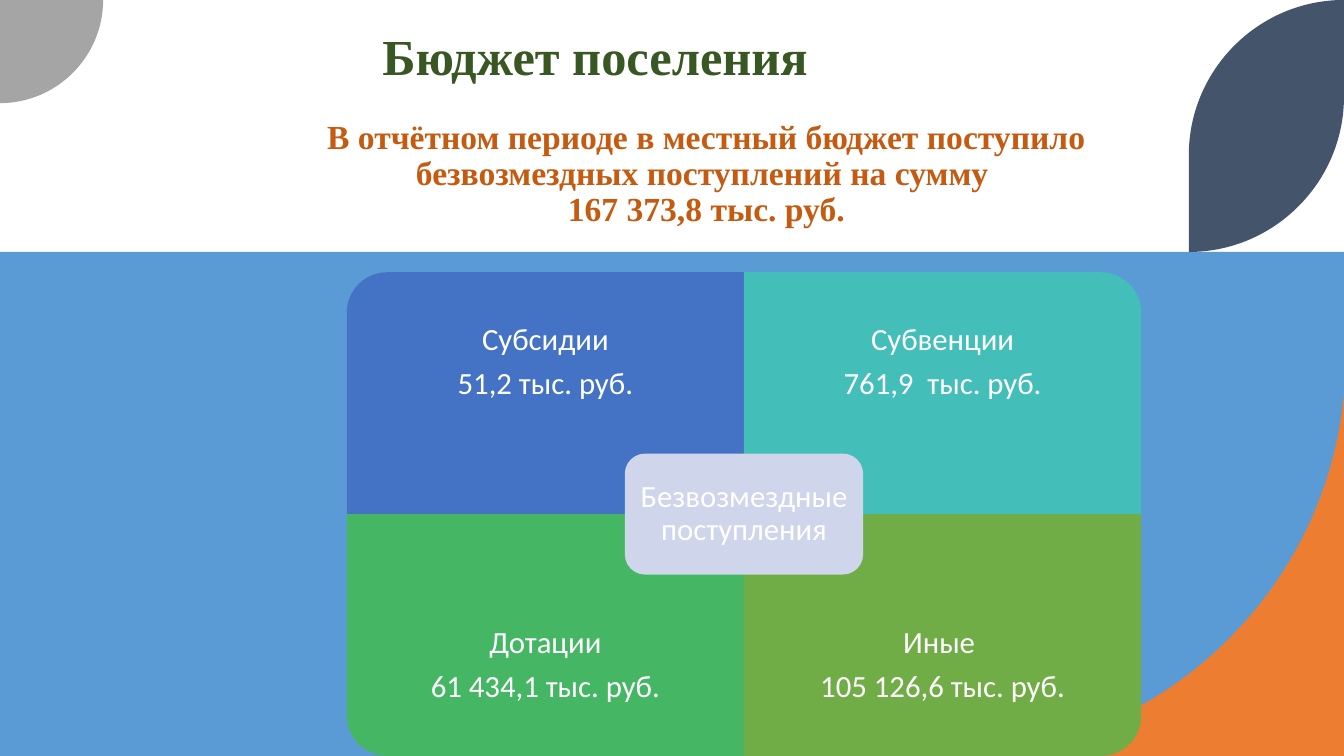
from pptx import Presentation
from pptx.dml.color import RGBColor
from pptx.enum.shapes import MSO_SHAPE
from pptx.enum.text import MSO_ANCHOR, MSO_AUTO_SIZE, PP_ALIGN
from pptx.oxml.ns import qn
from pptx.util import Cm, Pt

RECT, ROUND1, ROUNDED = (MSO_SHAPE.RECTANGLE, MSO_SHAPE.ROUND_1_RECTANGLE,
                         MSO_SHAPE.ROUNDED_RECTANGLE)
MIDDLE, TOP, BOTTOM = MSO_ANCHOR.MIDDLE, MSO_ANCHOR.TOP, MSO_ANCHOR.BOTTOM
LEFT, CENTER = PP_ALIGN.LEFT, PP_ALIGN.CENTER

COLORS = {
    "band": "5B9BD5", "corner": "ED7D31", "quarter": "A5A5A5", "leaf": "44546A",
    "title": "385723", "summary": "C55A11", "white": "FFFFFF",
    "subsidies": "4472C4", "subventions": "43BEB9",
    "grants": "45B664", "other": "70AD47", "center": "CFD5EA",
}
WIDTH, HEIGHT = 33.87, 19.05
SERIF, SANS = "Times New Roman", "Calibri"

# Each quadrant: column, row, rotation, colour, lines of text
QUADRANTS = [
    (0, 0, 270, "subsidies", ["Субсидии", "51,2 тыс. руб."]),
    (1, 0, 0, "subventions", ["Субвенции", "761,9  тыс. руб."]),
    (0, 1, 180, "grants", ["Дотации", "61 434,1 тыс. руб."]),
    (1, 1, 90, "other", ["Иные ", "105 126,6 тыс. руб."]),
]


def paint(sp, color):
    sp.shadow.inherit = False
    sp.fill.solid()
    sp.fill.fore_color.rgb = RGBColor.from_string(COLORS[color])
    sp.line.fill.background()


def add_block(s, kind, x, y, w, h, color):
    sp = s.shapes.add_shape(kind, Cm(x), Cm(y), Cm(w), Cm(h))
    paint(sp, color)
    return sp


def quarter_arc(start, corner, end):
    """Bezier control points and end point of a quarter circle."""
    def toward(a):
        return tuple(u + 0.55 * (v - u) for u, v in zip(a, corner))
    return [toward(start), toward(end), end]


def add_outline(s, start, segments, color):
    """A segment is one point for a line, three for a curve."""
    points = [(Cm(x), Cm(y)) for segment in segments for x, y in segment]
    builder = s.shapes.build_freeform(Cm(start[0]), Cm(start[1]), scale=1.0)
    builder.add_line_segments(points, close=True)
    sp = builder.convert_to_shape()
    paint(sp, color)
    # Join each group of three points into one curve
    steps = iter(list(sp.element.iter(qn("a:lnTo"))))
    for segment in segments:
        group = [next(steps) for _ in segment]
        if len(group) == 3:
            curve = group[0].makeelement(qn("a:cubicBezTo"), {})
            group[0].addprevious(curve)
            for step in group:
                curve.append(step[0])
                step.getparent().remove(step)


def write(tf, lines, font, size, color, bold=False, align=CENTER, anchor=MIDDLE, after=0):
    tf.word_wrap = True
    tf.auto_size = MSO_AUTO_SIZE.NONE
    tf.vertical_anchor = anchor
    for i, line in enumerate(lines):
        p = tf.add_paragraph() if i else tf.paragraphs[0]
        p.alignment = align
        p.line_spacing = 0.9
        p.space_before, p.space_after = Pt(0), Pt(after)
        r = p.add_run()
        r.text = line
        r.font.name, r.font.size, r.font.bold = font, Pt(size), bold
        r.font.color.rgb = RGBColor.from_string(COLORS[color])


def add_label(s, x, y, w, h, inset, lines):
    tf = s.shapes.add_textbox(Cm(x), Cm(y), Cm(w), Cm(h)).text_frame
    tf.margin_left = tf.margin_right = tf.margin_top = tf.margin_bottom = Cm(inset)
    write(tf, lines, SANS, 22, "white", after=7.7)


def place(s, sp, x, y, w, h):
    """Position a placeholder and bring it in front of the background."""
    sp.left, sp.top, sp.width, sp.height = Cm(x), Cm(y), Cm(w), Cm(h)
    s.shapes.element.append(sp.element)


def draw_background(s, w, h):
    band_top, bleed = 6.35, 0.04
    right = w + bleed
    add_block(s, RECT, 0, band_top, right, h - band_top, "band")
    # Lower right corner outside a quarter circle
    big = 10.03
    start, corner, end = (right, h - big), (right, h), (right - big, h)
    add_outline(s, start, [quarter_arc(start, corner, end), [corner]], "corner")
    # Upper left quarter circle
    small = 2.6
    start, corner, end = (small, 0), (small, small), (0, small)
    add_outline(s, (0, 0), [[start], quarter_arc(start, corner, end)], "quarter")
    # Upper right leaf, rounded at two opposite corners
    leaf = 3.91
    x = w - leaf
    tip, foot = (w, 0), (x, band_top)
    side, shoulder = (w, band_top - leaf), (x, leaf)
    add_outline(s, tip, [[side], quarter_arc(side, (w, band_top), foot),
                         [shoulder], quarter_arc(shoulder, (x, 0), tip)], "leaf")


def draw_header(s, x, y, w):
    title, body = s.shapes.title, s.placeholders[1]
    place(s, title, x + 1.5, y + 0.02, 11.93, 2.46)
    write(title.text_frame, ["Бюджет поселения"], SERIF, 36, "title", True, LEFT, BOTTOM)
    place(s, body, x, y + 3.08, w, 4.42)
    write(body.text_frame,
          ["В отчётном периоде в местный бюджет поступило безвозмездных поступлений на сумму ",
           "167 373,8 тыс. руб."], SERIF, 24, "summary", True, CENTER, TOP)
    # No bullets or indents in the summary
    for p in body.text_frame.paragraphs:
        pPr = p._p.get_or_add_pPr()
        pPr.set("marL", "0")
        pPr.set("indent", "0")
        pPr.append(pPr.makeelement(qn("a:buNone"), {}))


def draw_matrix(s, x, y, w, h):
    cw, ch = w / 2, h / 2
    for col, row, turn, color, lines in QUADRANTS:
        cx, cy = x + col * cw, y + row * ch
        # A quarter turn swaps the sides around the same centre
        bw, bh = (ch, cw) if turn % 180 else (cw, ch)
        sp = add_block(s, ROUND1, cx + (cw - bw) / 2, cy + (ch - bh) / 2, bw, bh, color)
        sp.rotation = turn
        add_label(s, cx, cy + row * ch / 4, cw, ch * 0.75, 0.43, lines)
    # Central caption
    mw, mh, pad = cw * 0.6, ch / 2, 0.15
    mx, my = x + cw - mw / 2, y + ch - mh / 2
    add_block(s, ROUNDED, mx, my, mw, mh, "center")
    add_label(s, mx + pad, my + pad, mw - 2 * pad, mh - 2 * pad, 0.23,
              ["Безвозмездные поступления"])


def main():
    prs = Presentation()
    prs.slide_width, prs.slide_height = Cm(WIDTH), Cm(HEIGHT)
    s = prs.slides.add_slide(prs.slide_layouts[1])
    draw_background(s, WIDTH, HEIGHT)
    draw_header(s, 7.88, -0.18, 19.84)
    draw_matrix(s, 8.74, 6.86, 20.02, 12.19)
    prs.save("out.pptx")


if __name__ == "__main__":
    main()
